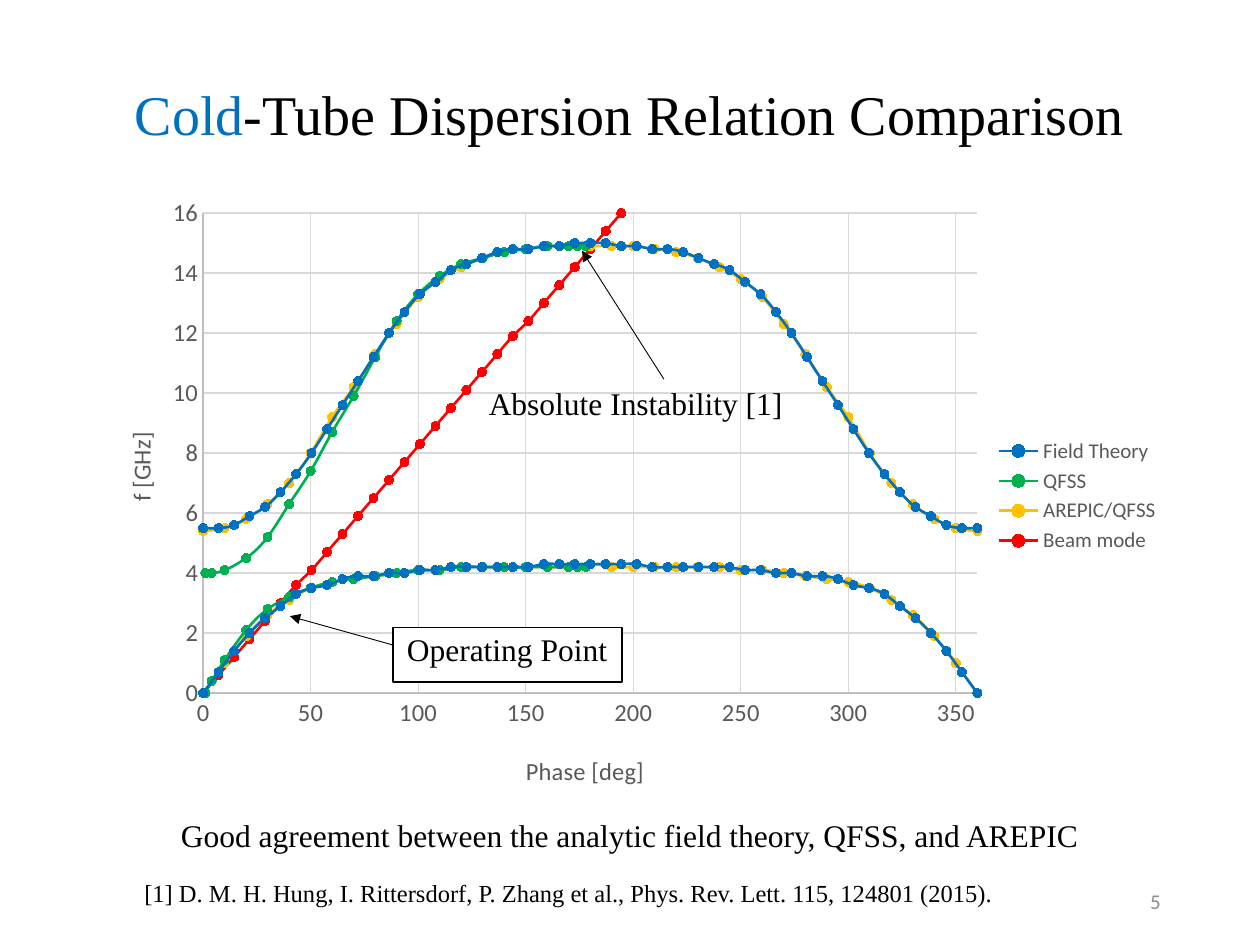
"""Build the cold-tube dispersion relation slide with its scatter chart and callouts."""
from dataclasses import dataclass

from lxml import etree
from pptx import Presentation
from pptx import util as u
from pptx.chart import data as chart_data
from pptx.dml.color import RGBColor
from pptx.enum import chart as ch
from pptx.enum import shapes, text
from pptx.oxml.ns import qn


@dataclass(frozen=True)
class Theme:
    serif: str = "Times New Roman"
    sans: str = "Calibri"
    black: str = "000000"
    white: str = "FFFFFF"
    blue: str = "0070C0"
    green: str = "00B050"
    yellow: str = "FFC000"
    red: str = "FF0000"
    label: str = "595959"
    axis: str = "BFBFBF"
    grid: str = "D9D9D9"
    number: str = "8C8C8C"
    title_size: float = 32
    note_size: float = 18
    axis_size: float = 14
    small_size: float = 12


@dataclass(frozen=True)
class Box:
    left: float
    top: float
    width: float
    height: float

    def emu(self) -> tuple:
        return tuple(u.Pt(v) for v in (self.left, self.top, self.width, self.height))


@dataclass(frozen=True)
class Note:
    words: str
    box: Box
    size: float
    align: text.PP_ALIGN = text.PP_ALIGN.LEFT
    wrap: bool = False
    font: str = Theme.serif
    color: str = Theme.black
    anchor: text.MSO_ANCHOR = text.MSO_ANCHOR.TOP


@dataclass(frozen=True)
class Arrow:
    start: tuple
    end: tuple


@dataclass(frozen=True)
class Curve:
    name: str
    color: str
    phases: list
    frequencies: list
    in_legend: bool = True


@dataclass(frozen=True)
class Axis:
    title: str
    top_value: float
    step: float
    title_at: tuple


T = Theme()


def mirrored(half: list) -> list:
    return half + half[-2::-1]


FINE = [round(7.2 * i, 1) for i in range(51)]
TENS = list(range(0, 361, 10))
HALF_BAND = [1, 4, *range(10, 171, 10), 174, 178]

FIELD_LOWER = mirrored([0, 0.7, 1.4, 2, 2.5, 2.9, 3.3, 3.5, 3.6, 3.8, 3.9, 3.9, 4, 4, 4.1, 4.1]
                       + [4.2] * 6 + [4.3] * 4)
FIELD_UPPER = mirrored([5.5, 5.5, 5.6, 5.9, 6.2, 6.7, 7.3, 8, 8.8, 9.6, 10.4, 11.2, 12, 12.7, 13.3,
                        13.7, 14.1, 14.3, 14.5, 14.7, 14.8, 14.8, 14.9, 14.9, 15, 15])
SOLVER_LOWER = [0, 0.4, 1.1, 2.1, 2.8, 3.2, 3.5, 3.7, 3.8, 3.9, 4, 4.1, 4.1] + [4.2] * 8
SOLVER_UPPER = [4, 4, 4.1, 4.5, 5.2, 6.3, 7.4, 8.7, 9.9, 11.2, 12.4, 13.3, 13.9, 14.3, 14.5, 14.7,
                14.8, 14.9, 14.9, 14.9, 14.9]
PARTICLE_LOWER = mirrored([0, 1, 1.9, 2.6, 3.1, 3.5, 3.7, 3.8, 3.9, 4, 4.1, 4.1] + [4.2] * 6 + [4.3])
PARTICLE_UPPER = mirrored([5.4, 5.5, 5.8, 6.3, 7, 8, 9.2, 10.2, 11.3, 12.3, 13.2, 13.8, 14.2, 14.5,
                           14.7, 14.8, 14.9, 14.9, 14.9])
BEAM = [round(0.5925 * i, 1) for i in range(44)]

CURVES = [
    Curve("Field Theory", T.blue, FINE, FIELD_LOWER),
    Curve("Series 2", T.blue, FINE, FIELD_UPPER, False),
    Curve("QFSS", T.green, HALF_BAND, SOLVER_LOWER),
    Curve("Series 4", T.green, HALF_BAND, SOLVER_UPPER, False),
    Curve("AREPIC/QFSS", T.yellow, TENS, PARTICLE_LOWER),
    Curve("Series 6", T.yellow, TENS, PARTICLE_UPPER, False),
    Curve("Beam mode", T.red, FINE, BEAM),
]
PHASE = Axis("Phase [deg]", 360, 50, (0.4, 0.91))
FREQUENCY = Axis("f [GHz]", 16, 2, (0.03, 0.39))

CENTER = text.PP_ALIGN.CENTER
PAGE_NUMBER = Note("5", Box(508.3, 500.4, 162, 28.8), T.small_size, text.PP_ALIGN.RIGHT, True,
                   T.sans, T.number, text.MSO_ANCHOR.MIDDLE)
CITATION = Note("[1] D. M. H. Hung, I. Rittersdorf, P. Zhang et al., Phys. Rev. Lett. 115, 124801 (2015).",
                Box(73.4, 498.2, 503.3, 24.5), T.axis_size, CENTER)
OPERATING_POINT = Note("Operating Point", Box(225.4, 356.4, 130.3, 28.8), T.note_size)
INSTABILITY = Note("Absolute Instability [1]", Box(272.2, 216, 214.6, 28.8), T.note_size, wrap=True)
CONCLUSION = Note("Good agreement between the analytic field theory, QFSS, and AREPIC",
                  Box(92.9, 463, 534.2, 28.8), T.note_size, CENTER)


def rgb(color: str) -> RGBColor:
    return RGBColor.from_string(color)


def style_font(font, name: str, size: float, color: str) -> None:
    font.name, font.size, font.bold = name, u.Pt(size), False
    font.color.rgb = rgb(color)


def style_line(line, color: str, width: float) -> None:
    line.color.rgb, line.width = rgb(color), u.Pt(width)


def add_run(paragraph, words: str, font: str, size: float, color: str) -> None:
    run = paragraph.add_run()
    run.text = words
    style_font(run.font, font, size, color)


def add_note(slide, note: Note) -> None:
    frame = slide.shapes.add_textbox(*note.box.emu()).text_frame
    frame.word_wrap, frame.vertical_anchor = note.wrap, note.anchor
    paragraph = frame.paragraphs[0]
    paragraph.alignment = note.align
    add_run(paragraph, note.words, note.font, note.size, note.color)


def add_arrow(slide, arrow: Arrow) -> None:
    ends = [u.Pt(v) for v in (*arrow.start, *arrow.end)]
    connector = slide.shapes.add_connector(shapes.MSO_CONNECTOR.STRAIGHT, *ends)
    style_line(connector.line, T.black, 0.5)
    etree.SubElement(connector.line._get_or_add_ln(), qn("a:tailEnd"), type="triangle")
    etree.SubElement(connector._element.spPr, qn("a:effectLst"))


def place(element, inner: bool = False, **fractions: float) -> None:
    layout = element.find(qn("c:layout"))
    if layout is None:
        layout = etree.Element(qn("c:layout"))
        element.insert(0, layout)
    manual = etree.SubElement(layout, qn("c:manualLayout"))
    settings = {"layoutTarget": "inner"} if inner else {}
    settings |= {"xMode": "edge", "yMode": "edge"} | fractions
    for tag, value in settings.items():
        etree.SubElement(manual, qn(f"c:{tag}"), val=str(value))


def style_axis(axis, look: Axis) -> None:
    axis.minimum_scale, axis.maximum_scale, axis.major_unit = 0, look.top_value, look.step
    axis.major_tick_mark = axis.minor_tick_mark = ch.XL_TICK_MARK.NONE
    axis.has_major_gridlines = True
    style_line(axis.major_gridlines.format.line, T.grid, 0.75)
    style_line(axis.format.line, T.axis, 0.75)
    style_font(axis.tick_labels.font, T.sans, T.axis_size, T.label)
    axis.tick_labels.number_format, axis.tick_labels.number_format_is_linked = "0", False
    paragraph = axis.axis_title.text_frame.paragraphs[0]
    add_run(paragraph, look.title, T.sans, T.axis_size, T.label)
    place(axis.axis_title._element, x=look.title_at[0], y=look.title_at[1])


def add_legend(chart) -> None:
    chart.has_legend = True
    legend = chart.legend
    legend.position, legend.include_in_layout = ch.XL_LEGEND_POSITION.RIGHT, False
    style_font(legend.font, T.sans, T.small_size, T.label)
    hidden = [i for i, curve in enumerate(CURVES) if not curve.in_legend]
    for position, index in enumerate(hidden, start=1):
        entry = etree.Element(qn("c:legendEntry"))
        etree.SubElement(entry, qn("c:idx"), val=str(index))
        etree.SubElement(entry, qn("c:delete"), val="1")
        legend._element.insert(position, entry)


def add_dispersion_chart(slide, box: Box) -> None:
    dispersion = chart_data.XyChartData()
    for curve in CURVES:
        points = dispersion.add_series(curve.name)
        for phase, frequency in zip(curve.phases, curve.frequencies):
            points.add_data_point(phase, frequency)
    chart = slide.shapes.add_chart(ch.XL_CHART_TYPE.XY_SCATTER_SMOOTH, *box.emu(), dispersion).chart
    chart.has_title = False
    style_font(chart.font, T.sans, 10, T.black)
    chart.plots[0].vary_by_categories = False
    for series, curve in zip(chart.plots[0].series, CURVES):
        series._element.get_or_add_smooth().val = True
        style_line(series.format.line, curve.color, 1.5)
        marker = series.marker
        marker.style, marker.size = ch.XL_MARKER_STYLE.CIRCLE, 5
        marker.format.fill.solid()
        marker.format.fill.fore_color.rgb = rgb(curve.color)
        style_line(marker.format.line, curve.color, 0.75)
    style_axis(chart.category_axis, PHASE)
    style_axis(chart.value_axis, FREQUENCY)
    add_legend(chart)
    place(chart._chartSpace.chart.plotArea, inner=True, x=0.107, y=0.043, w=0.713, h=0.776)


def add_frame(slide, box: Box) -> None:
    frame = slide.shapes.add_shape(shapes.MSO_SHAPE.RECTANGLE, *box.emu())
    frame.shadow.inherit = False
    frame.fill.solid()
    frame.fill.fore_color.rgb = rgb(T.white)
    style_line(frame.line, T.black, 1)


def add_title(slide, box: Box) -> None:
    title = slide.shapes.title
    title.left, title.top, title.width, title.height = box.emu()
    title.text_frame.vertical_anchor = text.MSO_ANCHOR.MIDDLE
    paragraph = title.text_frame.paragraphs[0]
    paragraph.alignment, paragraph.line_spacing = CENTER, 0.9
    add_run(paragraph, "Cold", T.serif, T.title_size, T.blue)
    add_run(paragraph, "-Tube Dispersion Relation Comparison", T.serif, T.title_size, T.black)


def main() -> None:
    deck = Presentation()
    deck.slide_width, deck.slide_height = u.Pt(720), u.Pt(540)
    slide = deck.slides.add_slide(deck.slide_layouts[5])
    add_title(slide, Box(49.7, 28.8, 620.6, 76.3))
    add_note(slide, PAGE_NUMBER)
    add_note(slide, CITATION)
    add_dispersion_chart(slide, Box(49.7, 106.6, 620.6, 353.5))
    add_frame(slide, Box(224.6, 358.6, 131, 31))
    add_note(slide, OPERATING_POINT)
    add_arrow(slide, Arrow((224.6, 368.6), (165.6, 352.1)))
    add_note(slide, INSTABILITY)
    add_arrow(slide, Arrow((379.4, 216.7), (332.6, 143.3)))
    add_note(slide, CONCLUSION)
    deck.save("out.pptx")


if __name__ == "__main__":
    main()
